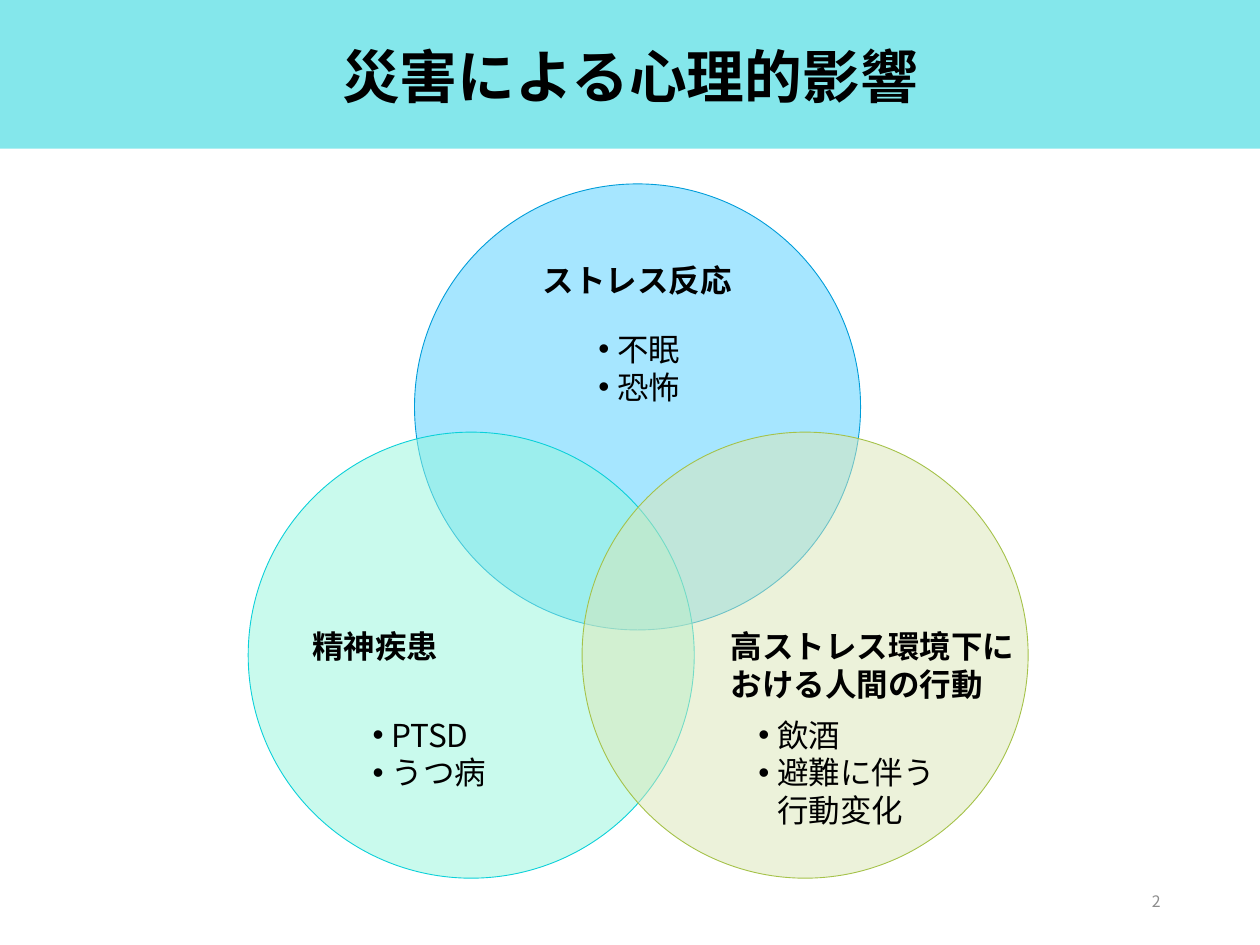
from pptx import Presentation
from pptx import util as u
from pptx.dml.color import RGBColor
from pptx.enum import shapes, text
from pptx.oxml.ns import qn
from lxml import etree

FONT = "Noto Sans CJK JP"
BLACK = RGBColor(0x00, 0x00, 0x00)
GREY = RGBColor(0x8C, 0x8C, 0x8C)
TEAL = RGBColor(0x0B, 0xD0, 0xD9)
BLUE = RGBColor(0x00, 0x9D, 0xD9)
GREEN = RGBColor(0xA5, 0xC2, 0x49)
PALE_BLUE = RGBColor(0x4F, 0xCE, 0xFF)
PALE_TEAL = RGBColor(0x94, 0xF7, 0xDC)
PALE_GREEN = RGBColor(0xDB, 0xE7, 0xB6)

DIAMETER = 3.54
LINE_PITCH = u.Pt(21.6)
HANGING = u.Inches(0.15)

# circle corner, fill, outline, heading, heading box, items, items box, items wrap
CIRCLES = [
    ((3.29, 1.46), PALE_BLUE, BLUE, "ストレス反応", (4.21, 2.02, 1.72, 0.4),
     ["不眠", "恐怖"], (4.65, 2.57, 0.86, 0.71), False),
    ((1.97, 3.43), PALE_TEAL, TEAL, "精神疾患", (2.38, 4.93, 1.77, 0.4),
     ["PTSD", "うつ病"], (2.86, 5.63, 1.11, 0.71), False),
    ((4.62, 3.43), PALE_GREEN, GREEN, "高ストレス環境下における人間の行動",
     (5.7, 4.93, 2.61, 0.71),
     ["飲酒", "避難に伴う行動変化"], (5.92, 5.63, 1.79, 1.01), True),
]


def add_translucent(page, kind, box, fill, line=None):
    shape = page.shapes.add_shape(kind, *map(u.Inches, box))
    shape.shadow.inherit = False
    shape.fill.solid()
    shape.fill.fore_color.rgb = fill
    color = shape.fill._xPr.find(".//" + qn("a:srgbClr"))
    etree.SubElement(color, qn("a:alpha"), val="50000")
    if line is None:
        shape.line.fill.background()
    else:
        shape.line.color.rgb = line
        shape.line.width = u.Pt(0.5)


def add_text(page, box, lines, size=18, color=BLACK, bold=False, bullet=False,
             wrap=True, align=text.PP_ALIGN.LEFT,
             anchor=text.MSO_ANCHOR.TOP, spacing=LINE_PITCH):
    frame = page.shapes.add_textbox(*map(u.Inches, box)).text_frame
    frame.word_wrap = wrap
    frame.vertical_anchor = anchor
    for index, line in enumerate(lines):
        para = frame.paragraphs[0] if index == 0 else frame.add_paragraph()
        para.alignment = align
        para.line_spacing = spacing
        if bullet:
            props = para._p.get_or_add_pPr()
            props.set("marL", str(HANGING))
            props.set("indent", str(-HANGING))
            etree.SubElement(props, qn("a:buFont"), typeface="Arial")
            etree.SubElement(props, qn("a:buChar"), char="•")
        span = para.add_run()
        span.text = line
        span.font.name = FONT
        span.font.size = u.Pt(size)
        span.font.bold = bold
        span.font.color.rgb = color
        etree.SubElement(span._r.get_or_add_rPr(), qn("a:ea"), typeface=FONT)


def add_header(page, box):
    left, top, width, height = box
    add_translucent(page, shapes.MSO_SHAPE.RECTANGLE, box, TEAL)
    add_text(page, (left + 0.69, top + 0.21, width - 1.38, 0.85),
             ["災害による心理的影響"], size=33, bold=True, spacing=0.9,
             align=text.PP_ALIGN.CENTER, anchor=text.MSO_ANCHOR.MIDDLE)


def add_venn(page, circles):
    # All circles lie behind all labels
    for (left, top), fill, line, *_ in circles:
        add_translucent(page, shapes.MSO_SHAPE.OVAL,
                        (left, top, DIAMETER, DIAMETER), fill, line)
    for *_, heading, heading_box, items, items_box, wrap in circles:
        add_text(page, heading_box, [heading], bold=True, wrap=wrap)
        add_text(page, items_box, items, bullet=True, wrap=wrap)


def add_page_number(page, box):
    add_text(page, box, ["2"], size=9, color=GREY, spacing=1.0,
             align=text.PP_ALIGN.RIGHT, anchor=text.MSO_ANCHOR.MIDDLE)


def main():
    deck = Presentation()
    deck.slide_width, deck.slide_height = u.Inches(10), u.Inches(7.5)
    page = deck.slides.add_slide(deck.slide_layouts[6])
    add_header(page, (0, 0, 10, 1.18))
    add_venn(page, CIRCLES)
    add_page_number(page, (7.06, 6.95, 2.25, 0.4))
    deck.save("out.pptx")


if __name__ == "__main__":
    main()
